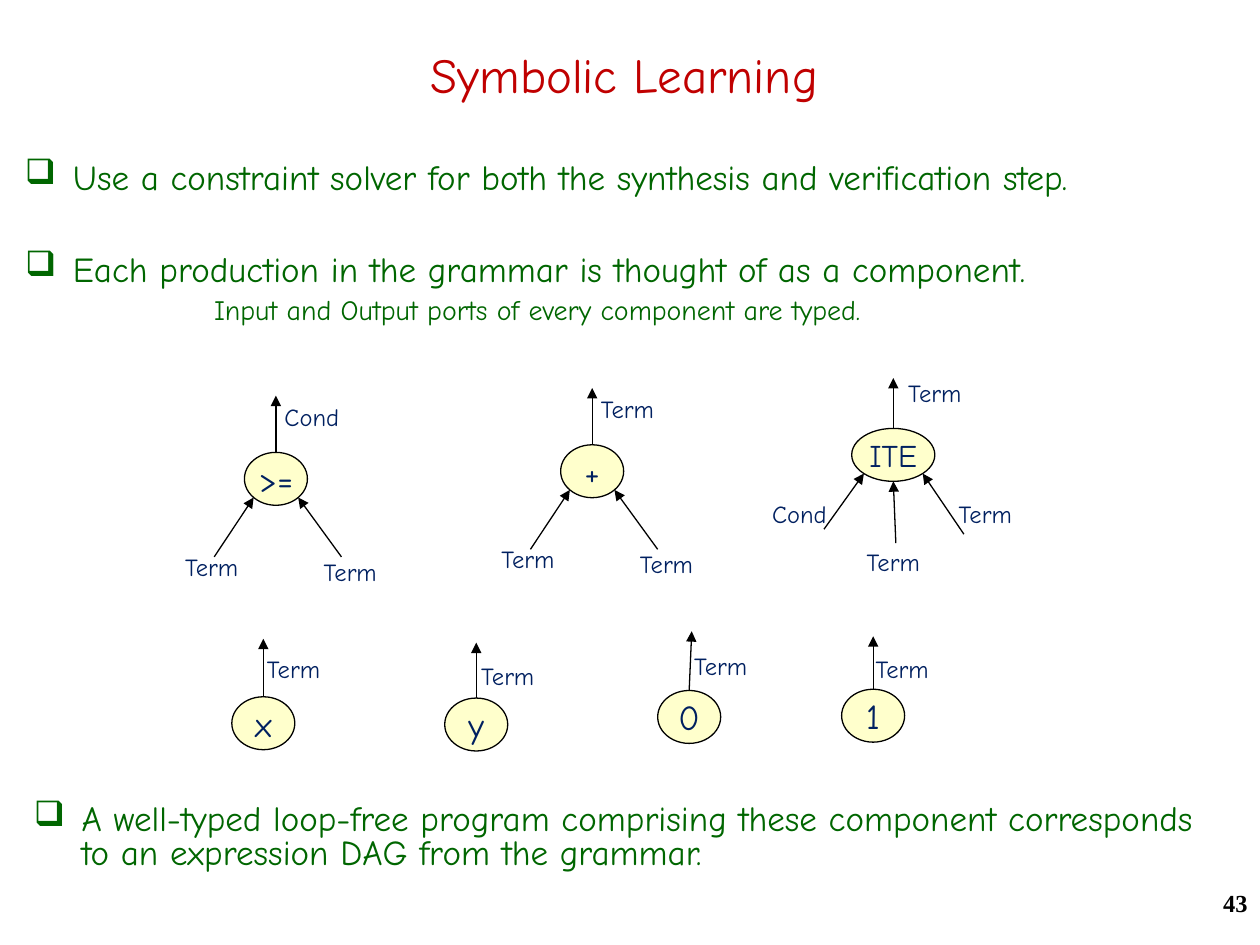
from dataclasses import dataclass
from math import sqrt

from lxml.etree import SubElement
from pptx import Presentation
from pptx.dml.color import RGBColor
from pptx.enum.shapes import MSO_CONNECTOR, MSO_SHAPE
from pptx.enum.text import MSO_ANCHOR, MSO_AUTO_SIZE, PP_ALIGN
from pptx.oxml.ns import qn
from pptx.util import Inches, Pt


@dataclass(frozen=True)
class Theme:
    heading: RGBColor = RGBColor(0xC0, 0x00, 0x00)
    body: RGBColor = RGBColor(0x00, 0x66, 0x00)
    diagram: RGBColor = RGBColor(0x00, 0x20, 0x60)
    node: RGBColor = RGBColor(0xFF, 0xFF, 0xCC)
    ink: RGBColor = RGBColor(0x00, 0x00, 0x00)
    font: str = "Comic Neue"
    number_font: str = "Times New Roman"
    title_size: int = 28
    body_size: int = 20
    detail_size: int = 16
    symbol_size: int = 20
    wide_symbol_size: int = 18
    label_size: int = 14
    number_size: int = 14
    line_width: float = 0.75


NODE_HEIGHT = 0.42
BINARY_INPUTS = [
    # arrow start, label corner, label; offsets from the node's centre
    ((-0.49, 0.62), (-0.82, 0.53), "Term"),
    ((0.52, 0.62), (0.28, 0.57), "Term"),
]
CHOICE_INPUTS = [
    ((-0.55, 0.59), (-1.06, 0.30), "Cond"),
    ((0.02, 0.70), (-0.31, 0.68), "Term"),
    ((0.56, 0.63), (0.42, 0.30), "Term"),
]
COMPONENTS = [
    # symbol, centre, node width, output tip, output label corner, output label, inputs
    (">=", (2.19, 3.80), 0.5, (0, -0.66), (-0.03, -0.66), "Cond", BINARY_INPUTS),
    ("+", (4.70, 3.74), 0.5, (0, -0.66), (-0.03, -0.66), "Term", BINARY_INPUTS),
    ("ITE", (7.09, 3.61), 0.66, (0, -0.61), (0.02, -0.66), "Term", CHOICE_INPUTS),
    ("x", (2.09, 5.74), 0.5, (0, -0.67), (-0.07, -0.60), "Term", []),
    ("y", (3.78, 5.75), 0.5, (0, -0.65), (-0.06, -0.55), "Term", []),
    ("0", (5.47, 5.69), 0.5, (0.02, -0.68), (-0.06, -0.57), "Term", []),
    ("1", (6.93, 5.68), 0.5, (0, -0.63), (-0.08, -0.54), "Term", []),
]


def apply_format(target, values):
    for attribute, value in values.items():
        setattr(target, attribute, value)


def shifted(point, offset):
    return point[0] + offset[0], point[1] + offset[1]


class SlideBuilder:
    def __init__(self, slide, theme):
        self.slide = slide
        self.theme = theme

    def styled_run(self, paragraph, text, size, color, font=None, **values):
        run = paragraph.add_run()
        run.text = text
        apply_format(run.font, {"size": Pt(size), "name": font or self.theme.font, **values})
        run.font.color.rgb = color

    def text_frame(self, box, shapes=None, **values):
        holder = (shapes or self.slide.shapes).add_textbox(*map(Inches, box))
        apply_format(holder.text_frame, {"word_wrap": True, **values})
        return holder.text_frame

    def line_of_text(self, box, text, size, color, align, anchor, **values):
        frame = self.text_frame(box, vertical_anchor=anchor)
        frame.paragraphs[0].alignment = align
        self.styled_run(frame.paragraphs[0], text, size, color, **values)

    def body_paragraph(self, paragraph, text, size, margin, hanging):
        apply_format(paragraph, {"line_spacing": 0.8, "space_before": Pt(0.35 * size)})
        properties = paragraph._p.get_or_add_pPr()
        properties.set("marL", str(Inches(margin)))
        properties.set("indent", str(-Inches(hanging)))
        if hanging:
            color = SubElement(properties, qn("a:buClr"))
            SubElement(color, qn("a:srgbClr")).set("val", str(self.theme.body))
            SubElement(properties, qn("a:buChar")).set("char", "❑")
        self.styled_run(paragraph, text, size, self.theme.body)

    def bullet(self, box, text, detail=None):
        frame = self.text_frame(box)
        self.body_paragraph(frame.paragraphs[0], text, self.theme.body_size, 0.38, 0.38)
        if detail:
            self.body_paragraph(frame.add_paragraph(), detail, self.theme.detail_size, 1.5, 0)

    def node(self, shapes, symbol, centre, width):
        corner = shifted(centre, (-width / 2, -NODE_HEIGHT / 2))
        oval = shapes.add_shape(MSO_SHAPE.OVAL, *map(Inches, (*corner, width, NODE_HEIGHT)))
        oval.shadow.inherit = False
        oval.fill.solid()
        oval.fill.fore_color.rgb = self.theme.node
        oval.line.color.rgb = self.theme.ink
        oval.line.width = Pt(self.theme.line_width)
        apply_format(oval.text_frame, {"word_wrap": False, "vertical_anchor": MSO_ANCHOR.MIDDLE})
        label = oval.text_frame.paragraphs[0]
        label.alignment = PP_ALIGN.CENTER
        size = self.theme.wide_symbol_size if len(symbol) > 2 else self.theme.symbol_size
        self.styled_run(label, symbol, size, self.theme.diagram)
        return oval

    def arrow(self, shapes, start, end):
        link = shapes.add_connector(MSO_CONNECTOR.STRAIGHT, *map(Inches, (*start, *end)))
        link.line.color.rgb = self.theme.ink
        link.line.width = Pt(self.theme.line_width)
        SubElement(link.line._get_or_add_ln(), qn("a:tailEnd")).set("type", "triangle")
        SubElement(link._element.spPr, qn("a:effectLst"))
        return link

    def port_label(self, shapes, corner, text):
        width = 0.64 if text == "Cond" else 0.69
        frame = self.text_frame((*corner, width, 0.34), shapes, word_wrap=False,
                                auto_size=MSO_AUTO_SIZE.SHAPE_TO_FIT_TEXT)
        self.styled_run(frame.paragraphs[0], text, self.theme.label_size, self.theme.diagram)

    def component(self, symbol, centre, width, tip, label_corner, label, inputs):
        """Draw a grammar production with its typed output and input ports."""
        shapes = self.slide.shapes.add_group_shape().shapes
        oval = self.node(shapes, symbol, centre, width)
        top = shifted(centre, (0, -NODE_HEIGHT / 2))
        self.arrow(shapes, top, shifted(centre, tip)).begin_connect(oval, 0)
        self.port_label(shapes, shifted(centre, label_corner), label)
        # Outer inputs meet the ellipse on its diagonals, a middle one at the bottom.
        diagonal = (width / 2 / sqrt(2), NODE_HEIGHT / 2 / sqrt(2))
        for start, corner, port in inputs:
            if abs(start[0]) < 0.1:
                contact = (0, NODE_HEIGHT / 2)
            else:
                contact = (diagonal[0] if start[0] > 0 else -diagonal[0], diagonal[1])
            self.arrow(shapes, shifted(centre, start), shifted(centre, contact))
            self.port_label(shapes, shifted(centre, corner), port)


def main():
    theme = Theme()
    presentation = Presentation()
    apply_format(presentation, {"slide_width": Inches(10), "slide_height": Inches(7.5)})
    builder = SlideBuilder(presentation.slides.add_slide(presentation.slide_layouts[6]), theme)

    builder.line_of_text((0.67, 0.25, 8.57, 0.67), "Symbolic Learning", theme.title_size,
                         theme.heading, PP_ALIGN.CENTER, MSO_ANCHOR.MIDDLE)
    builder.bullet((0.1, 1.25, 10, 0.53),
                   "Use a constraint solver for both the synthesis and verification step.")
    builder.line_of_text((7.92, 7, 2.08, 0.5), "43", theme.number_size, theme.ink,
                         PP_ALIGN.RIGHT, MSO_ANCHOR.TOP, font=theme.number_font, bold=True)
    builder.bullet((0.1, 1.98, 9.62, 0.68),
                   "Each production in the grammar is thought of as a component.",
                   "Input and Output ports of every component are typed.")
    builder.bullet((0.17, 6.34, 9.62, 0.68),
                   "A well-typed loop-free program comprising these component corresponds "
                   "to an expression DAG from the grammar.")
    for component in COMPONENTS:
        builder.component(*component)

    presentation.save("out.pptx")


if __name__ == "__main__":
    main()
